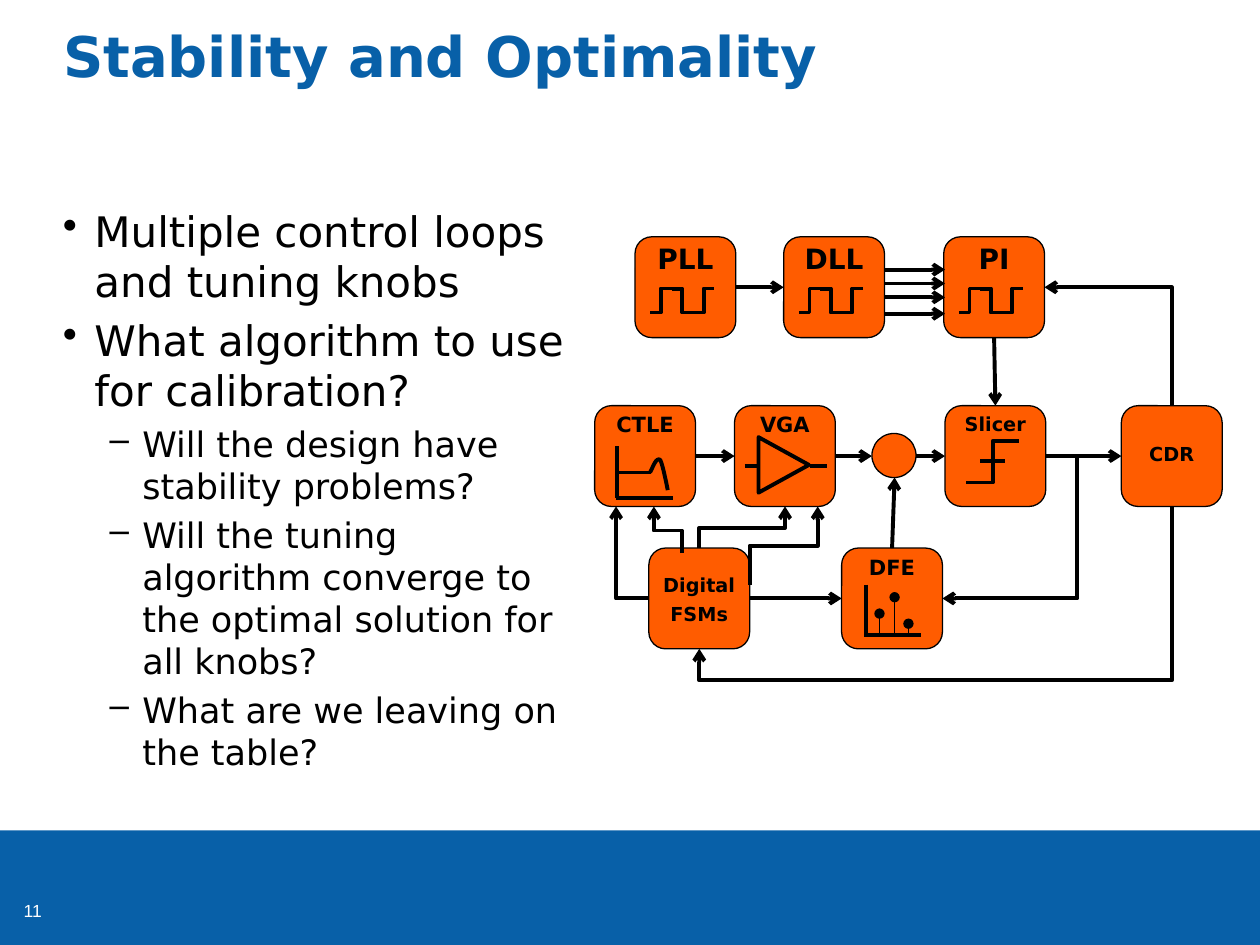
from dataclasses import dataclass
from typing import NamedTuple, Optional, Union

from lxml.etree import SubElement
from pptx import Presentation
from pptx.dml.color import RGBColor
from pptx.enum.shapes import MSO_CONNECTOR as Connector, MSO_SHAPE as Preset
from pptx.enum.text import MSO_ANCHOR as Anchor, PP_ALIGN as Align
from pptx.oxml.ns import qn
from pptx.util import Inches, Pt


@dataclass(frozen=True)
class Theme:
    font: str = "DejaVu Sans"
    number_font: str = "Arial"
    blue: RGBColor = RGBColor(0x08, 0x60, 0xA8)
    orange: RGBColor = RGBColor(0xFF, 0x5C, 0x00)
    black: RGBColor = RGBColor(0, 0, 0)
    white: RGBColor = RGBColor(255, 255, 255)
    title: int = 32
    body: tuple = (24, 20)
    number: int = 10
    thin: float = 0.75
    thick: float = 2.25


class Point(NamedTuple):
    x: float
    y: float


class Side(NamedTuple):
    shape: object
    site: int


class Block(NamedTuple):
    label: str
    left: float
    top: float
    size: int
    inset: float = 0.1
    inset_top: float = 0.05
    anchor: Anchor = Anchor.TOP


class Bullet(NamedTuple):
    text: str
    level: int = 0


class Route(NamedTuple):
    start: Point
    end: Point
    vertical: bool  # leaves the start vertically
    middle: Optional[float] = None  # place of the middle run; None: one corner


THEME = Theme()
SIDE = 0.8
TOP, LEFT, BOTTOM, RIGHT = range(4)
End = Union[Point, Side]

BULLETS = [
    Bullet("Multiple control loops and tuning knobs"),
    Bullet("What algorithm to use for calibration?"),
    Bullet("Will the design have stability problems?", 1),
    Bullet("Will the tuning algorithm converge to the optimal solution for all knobs?", 1),
    Bullet("What are we leaving on the table?", 1),
]
BLOCKS = [
    Block("PLL", 5.04, 1.88, 16), Block("DLL", 6.22, 1.88, 16), Block("PI", 7.49, 1.88, 16),
    Block("CTLE", 4.72, 3.22, 12), Block("VGA", 5.83, 3.22, 12),
    Block("Slicer", 7.5, 3.22, 11, 0),
    Block("CDR", 8.9, 3.22, 11, 0, anchor=Anchor.MIDDLE),
    Block("DFE", 6.68, 4.35, 12), Block("Digital\nFSMs", 5.15, 4.35, 11, 0, 0.2),
]
ROUTES = [
    Route(Point(9.3, 3.22), Point(8.29, 2.28), True),
    Route(Point(8.3, 3.62), Point(7.48, 4.75), False, 8.55),
    Route(Point(9.3, 4.02), Point(5.55, 5.15), True, 5.4),
    Route(Point(5.15, 4.75), Point(4.89, 4.02), False),
    Route(Point(5.41, 4.39), Point(5.19, 4.02), True, 4.21),
    Route(Point(5.55, 4.35), Point(6.23, 4.02), True, 4.19),
    Route(Point(5.95, 4.64), Point(6.49, 4.02), True, 4.33),
]


def style_font(paragraph, size: int, color: RGBColor, bold: bool = False, name: str = THEME.font) -> None:
    font = paragraph.font
    font.name, font.size, font.bold = name, Pt(size), bold
    font.color.rgb = color


def add_text_box(slide, left: float, top: float, width: float, height: float, inset: float = 0):
    frame = slide.shapes.add_textbox(*map(Inches, (left, top, width, height))).text_frame
    frame.word_wrap = True
    if inset == 0:
        frame.margin_left = frame.margin_right = frame.margin_top = frame.margin_bottom = 0
    return frame


def add_shape(slide, preset, left: float, top: float, width: float, height: float,
              fill: RGBColor = THEME.orange, weight: float = THEME.thin):
    shape = slide.shapes.add_shape(preset, *map(Inches, (left, top, width, height)))
    shape.shadow.inherit = False
    shape.fill.solid()
    shape.fill.fore_color.rgb = fill
    if weight:
        shape.line.color.rgb, shape.line.width = THEME.black, Pt(weight)
    else:
        shape.line.fill.background()
    return shape


def add_block(slide, block: Block):
    shape = add_shape(slide, Preset.ROUNDED_RECTANGLE, block.left, block.top, SIDE, SIDE)
    frame = shape.text_frame
    frame.margin_left = frame.margin_right = Inches(block.inset)
    frame.margin_top, frame.margin_bottom = Inches(block.inset_top), Inches(0.05)
    frame.vertical_anchor = block.anchor
    frame.text = block.label
    for paragraph in frame.paragraphs:
        paragraph.alignment, paragraph.line_spacing = Align.CENTER, 0.8
        paragraph.space_before = Pt(block.size / 2)
        style_font(paragraph, block.size, THEME.black, True)
    return shape


def add_line(slide, start: End, end: End, weight: float = THEME.thick,
             head: str = "", tail: str = "", kind=Connector.STRAIGHT):
    places = [Point(0, 0) if isinstance(place, Side) else place for place in (start, end)]
    line = slide.shapes.add_connector(kind, *(Inches(value) for place in places for value in place))
    if isinstance(start, Side):
        line.begin_connect(*start)
    if isinstance(end, Side):
        line.end_connect(*end)
    line.line.color.rgb, line.line.width = THEME.black, Pt(weight)
    for tag, arrowhead in (("a:headEnd", head), ("a:tailEnd", tail)):
        if arrowhead:
            SubElement(line.line._get_or_add_ln(), qn(tag), type=arrowhead)
    SubElement(line._element.spPr, qn("a:effectLst"))
    return line


def add_route(slide, route: Route) -> None:
    start, end = route.start, route.end
    dx, dy = end.x - start.x, end.y - start.y
    if route.vertical:  # a quarter turn about the centre
        x, y = start.x + dx / 2, start.y + dy / 2
        start, end = Point(x - dy / 2, y + dx / 2), Point(x + dy / 2, y - dx / 2)
    line = add_line(slide, start, end, tail="arrow", kind=Connector.ELBOW)
    line.rotation = 90 if route.vertical else 0
    geometry = line._element.spPr.find(qn("a:prstGeom"))
    if route.middle is None:
        geometry.set("prst", "bentConnector2")
        return
    share = (route.middle - route.start.y) / dy if route.vertical else (route.middle - route.start.x) / dx
    SubElement(geometry.find(qn("a:avLst")), qn("a:gd"), name="adj1", fmla=f"val {round(share * 100000)}")


def add_clock(slide, left: float) -> None:
    step, low, high = 0.17, 2.48, 2.29
    for index, (y1, y2) in enumerate([(low, high), (high, low), (low, high)]):
        x = left + 0.12 + index * step
        add_line(slide, Point(x, y1), Point(x + step, y2), kind=Connector.ELBOW)


def add_axes(slide, x: float, top: float, bottom: float) -> None:
    add_line(slide, Point(x, top), Point(x, bottom))
    add_line(slide, Point(x - 0.01, bottom), Point(x + 0.44, bottom))


def add_response_curve(slide) -> None:
    curves = [((5.16, 3.75), (5.19, 3.69), (5.21, 3.63), (5.24, 3.65)),
              ((5.24, 3.65), (5.26, 3.68), (5.3, 3.89), (5.3, 3.89))]
    points = []
    for curve in curves:
        for t in (step / 8 for step in range(1, 9)):
            weights = ((1 - t) ** 3, 3 * t * (1 - t) ** 2, 3 * t * t * (1 - t), t ** 3)
            points.append(tuple(Inches(sum(w * p[axis] for w, p in zip(weights, curve))) for axis in (0, 1)))
    builder = slide.shapes.build_freeform(Inches(5.16), Inches(3.75))
    builder.add_line_segments(points, close=False)
    shape = builder.convert_to_shape()
    shape.shadow.inherit = False
    shape.fill.background()
    shape.line.color.rgb, shape.line.width = THEME.black, Pt(THEME.thick)


def add_bullets(slide) -> None:
    frame = add_text_box(slide, 0.5, 1.63, 4.04, 4.98)
    for index, bullet in enumerate(BULLETS):
        paragraph = frame.paragraphs[0] if index == 0 else frame.add_paragraph()
        paragraph.text, paragraph.level = bullet.text, bullet.level
        size = THEME.body[bullet.level]
        style_font(paragraph, size, THEME.black)
        paragraph.space_before = Pt(size * 0.2)
        margin, indent, mark = ((0.25, -0.25, "•"), (0.63, -0.26, "–"))[bullet.level]
        properties = paragraph._p.get_or_add_pPr()
        properties.set("marL", str(Inches(margin)))
        properties.set("indent", str(Inches(indent)))
        properties.insert_element_before(
            properties.makeelement(qn("a:buChar"), {"char": mark}), "a:tabLst", "a:defRPr", "a:extLst")


def add_diagram(slide) -> None:
    blocks = {block.label.split("\n")[0]: add_block(slide, block) for block in BLOCKS}
    add_shape(slide, Preset.OVAL, 6.92, 3.44, 0.35, 0.35)

    # Symbols inside the blocks
    for block in BLOCKS[:3]:
        add_clock(slide, block.left)
    add_axes(slide, 4.9, 3.54, 3.95)
    add_line(slide, Point(4.9, 3.75), Point(5.17, 3.75))
    add_response_curve(slide)
    add_shape(slide, Preset.ISOSCELES_TRIANGLE, 6, 3.49, 0.44, 0.4, weight=THEME.thick).rotation = 90
    for x1, x2 in ((5.91, 6.02), (6.43, 6.56)):
        add_line(slide, Point(x1, 3.7), Point(x2, 3.7))
    add_axes(slide, 6.87, 4.64, 5.04)
    for x, y in ((6.98, 4.87), (7.1, 4.74), (7.21, 4.95)):
        add_line(slide, Point(x, y), Point(x, 5.04), THEME.thin, head="oval")
    add_line(slide, Point(7.67, 3.83), Point(8.09, 3.5), kind=Connector.ELBOW)
    add_line(slide, Point(7.78, 3.66), Point(7.98, 3.66))

    # Straight signals
    for source, site, target, target_site in (
            ("CTLE", RIGHT, "VGA", LEFT), ("Slicer", RIGHT, "CDR", LEFT), ("PLL", RIGHT, "DLL", LEFT),
            ("PI", BOTTOM, "Slicer", TOP), ("Digital", RIGHT, "DFE", LEFT)):
        add_line(slide, Side(blocks[source], site), Side(blocks[target], target_site), tail="arrow")
    add_line(slide, Side(blocks["VGA"], RIGHT), Point(6.92, 3.62), tail="arrow")
    add_line(slide, Point(7.27, 3.62), Side(blocks["Slicer"], LEFT), tail="arrow")
    add_line(slide, Side(blocks["DFE"], TOP), Point(7.1, 3.79), tail="arrow")
    for y in (2.14, 2.25, 2.36, 2.49):
        add_line(slide, Point(7.02, y), Point(7.5, y), tail="arrow")

    # Bent signals
    for route in ROUTES:
        add_route(slide, route)


def main() -> None:
    presentation = Presentation()
    presentation.slide_width, presentation.slide_height = Inches(10), Inches(7.5)
    slide = presentation.slides.add_slide(presentation.slide_layouts[6])

    # Footer band and page number
    add_shape(slide, Preset.RECTANGLE, 0, 6.59, 10, 0.91, THEME.blue, 0)
    frame = add_text_box(slide, 0, 6.86, 0.43, 0.5, inset=0.1)
    frame.text, frame.vertical_anchor = "11", Anchor.BOTTOM
    frame.paragraphs[0].alignment = Align.RIGHT
    style_font(frame.paragraphs[0], THEME.number, THEME.white, name=THEME.number_font)

    # Title
    frame = add_text_box(slide, 0.5, 0.17, 9.01, 0.97)
    frame.text = "Stability and Optimality"
    style_font(frame.paragraphs[0], THEME.title, THEME.blue, True)

    add_bullets(slide)
    add_diagram(slide)
    presentation.save("out.pptx")


if __name__ == "__main__":
    main()
